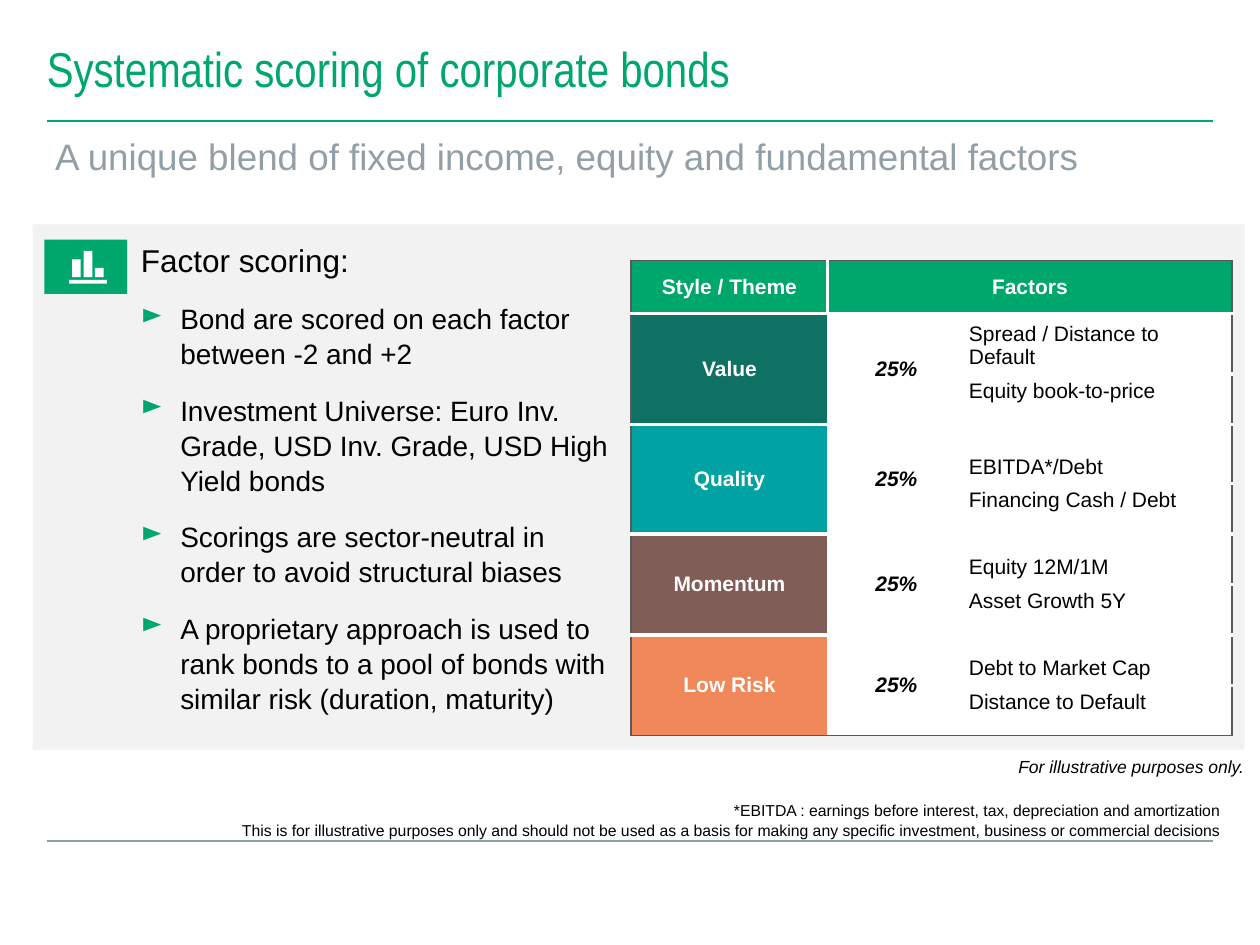
from pptx import Presentation
from pptx.dml.color import RGBColor
from pptx.enum.shapes import MSO_CONNECTOR, MSO_SHAPE
from pptx.enum.text import MSO_ANCHOR, PP_ALIGN
from pptx.oxml.ns import qn
from pptx.util import Pt
from lxml.etree import SubElement

GREEN = RGBColor(0x00, 0xA7, 0x6C)
GREY = RGBColor(0x93, 0x9F, 0xA6)
PANEL = RGBColor(0xF2, 0xF2, 0xF2)
BORDER = RGBColor(0x59, 0x59, 0x59)
BLACK = RGBColor(0x00, 0x00, 0x00)
WHITE = RGBColor(0xFF, 0xFF, 0xFF)
DARK_GREEN = RGBColor(0x0F, 0x71, 0x64)
TEAL = RGBColor(0x00, 0xA2, 0xA3)
BROWN = RGBColor(0x80, 0x5D, 0x56)
ORANGE = RGBColor(0xF1, 0x88, 0x5A)

BULLETS = [
    "Bond are scored on each factor between -2 and +2",
    "Investment Universe: Euro Inv. Grade, USD Inv. Grade, USD High Yield bonds",
    "Scorings are sector-neutral in order to avoid structural biases",
    "A proprietary approach is used to rank bonds to a pool of bonds with "
    "similar risk (duration, maturity)",
]
THEMES = [
    ("Value", DARK_GREEN, "Spread / Distance to Default", "Equity book-to-price"),
    ("Quality", TEAL, "EBITDA*/Debt", "Financing Cash / Debt"),
    ("Momentum", BROWN, "Equity 12M/1M", "Asset Growth 5Y"),
    ("Low Risk", ORANGE, "Debt to Market Cap", "Distance to Default"),
]
COLUMNS = [112.3, 78.5, 152.6]
ROWS = [30.2, 33.8, 28.8, 33.8] + [28.8] * 5


class Deck:
    font = "Arial"

    def __init__(self, prs):
        self.slide = prs.slides.add_slide(prs.slide_layouts[6])

    def line(self, y, color):
        """Draw a rule across the slide."""
        sp = self.slide.shapes.add_connector(
            MSO_CONNECTOR.STRAIGHT, Pt(26.8), Pt(y), Pt(693.2), Pt(y))
        sp.line.color.rgb = color
        sp.line.width = Pt(1)
        SubElement(sp._element.spPr, qn("a:effectLst"))

    def rect(self, x, y, w, h, color):
        sp = self.slide.shapes.add_shape(
            MSO_SHAPE.RECTANGLE, Pt(x), Pt(y), Pt(w), Pt(h))
        sp.shadow.inherit = False
        sp.fill.solid()
        sp.fill.fore_color.rgb = color
        sp.line.fill.background()

    def text(self, x, y, w, h, lines, size, color=BLACK, font=None, align=None,
             italic=False, margins=(0, 0), anchor=MSO_ANCHOR.TOP, spacing=None):
        """Add a text box and return its paragraphs."""
        tf = self.slide.shapes.add_textbox(Pt(x), Pt(y), Pt(w), Pt(h)).text_frame
        tf.word_wrap = True
        tf.vertical_anchor = anchor
        tf.margin_left = tf.margin_right = Pt(margins[0])
        tf.margin_top = tf.margin_bottom = Pt(margins[1])
        tf.text = "\n".join(lines)
        for p in tf.paragraphs:
            p.alignment = align
            p.line_spacing = spacing
            self.style(p, size, color, font, italic=italic)
        return tf.paragraphs

    def style(self, p, size, color, font=None, bold=False, italic=False):
        p.font.name = font or self.font
        p.font.size = Pt(size)
        p.font.color.rgb = color
        p.font.bold = bold
        p.font.italic = italic

    def bullet_list(self, x, y, w, h, heading, items):
        paragraphs = self.text(x, y, w, h, [heading] + items, 16, spacing=1.05)
        for p in paragraphs:
            p.space_after = Pt(12)
        paragraphs[0].font.size = Pt(18)
        paragraphs[0]._p.get_or_add_pPr().set("marL", str(Pt(13.5)))
        for p in paragraphs[1:]:
            pPr = p._p.get_or_add_pPr()
            pPr.set("marL", str(Pt(36)))
            pPr.set("indent", str(Pt(-22.5)))
            # Bullet elements must stand before the paragraph's font properties
            color = pPr.makeelement(qn("a:buClr"), {})
            SubElement(color, qn("a:srgbClr"), val=str(GREEN))
            char = pPr.makeelement(qn("a:buChar"), {"char": "►"})
            for element in (color, char):
                pPr.find(qn("a:defRPr")).addprevious(element)

    def table(self, x, y, columns, rows):
        table = self.slide.shapes.add_table(
            len(rows), len(columns), Pt(x), Pt(y),
            Pt(sum(columns)), Pt(sum(rows))).table
        table.first_row = table.horz_banding = False
        for column, width in zip(table.columns, columns):
            column.width = Pt(width)
        for row, height in zip(table.rows, rows):
            row.height = Pt(height)
        return table

    def cell(self, cell, text, fill, color=BLACK, bold=False, italic=False,
             align=PP_ALIGN.CENTER, anchor=MSO_ANCHOR.MIDDLE, margins=(2.2, 2.9)):
        cell.fill.solid()
        cell.fill.fore_color.rgb = fill
        cell.vertical_anchor = anchor
        cell.margin_left = cell.margin_right = Pt(margins[0])
        cell.margin_top = cell.margin_bottom = Pt(margins[1])
        cell.text = text
        p = cell.text_frame.paragraphs[0]
        p.alignment = align
        self.style(p, 12, color, bold=bold, italic=italic)
        return p

    def label(self, cell, text, fill):
        """Fill a cell with a bold white heading."""
        return self.cell(cell, text, fill, WHITE, bold=True, margins=(6.5, 3.6))

    def borders(self, table):
        """Rule the table white inside and dark grey around the outside."""
        last_row, last_col = len(table.rows) - 1, len(table.columns) - 1
        for row in range(last_row + 1):
            for col in range(last_col + 1):
                cell = table.cell(row, col)
                bottom = row + cell.span_height - 1
                right = col + cell.span_width - 1
                side = 2.25 if row == 0 else 1
                edges = [("L", col == 0, side), ("R", right == last_col, side),
                         ("T", row == 0, 2.25), ("B", bottom == last_row, 2.25)]
                tcPr = cell._tc.get_or_add_tcPr()
                for i, (edge, outer, width) in enumerate(edges):
                    ln = tcPr.makeelement(
                        qn("a:ln" + edge), {"w": str(Pt(1 if outer else width))})
                    fill = SubElement(ln, qn("a:solidFill"))
                    SubElement(fill, qn("a:srgbClr"),
                               val=str(BORDER if outer else WHITE))
                    tcPr.insert(i, ln)


def add_factor_table(deck):
    table = deck.table(360.7, 149, COLUMNS, ROWS)
    table.cell(0, 1).merge(table.cell(0, 2))
    deck.label(table.cell(0, 0), "Style / Theme", GREEN)
    deck.label(table.cell(0, 1), "Factors", GREEN)
    for i, (theme, color, first, second) in enumerate(THEMES):
        row = 1 + 2 * i
        for col in (0, 1):
            table.cell(row, col).merge(table.cell(row + 1, col))
        deck.label(table.cell(row, 0), theme, color).space_after = Pt(6)
        deck.cell(table.cell(row, 1), "25%", WHITE, bold=True, italic=True)
        deck.cell(table.cell(row, 2), first, WHITE,
                  align=PP_ALIGN.LEFT, anchor=MSO_ANCHOR.BOTTOM)
        deck.cell(table.cell(row + 1, 2), second, WHITE,
                  align=PP_ALIGN.LEFT, anchor=MSO_ANCHOR.TOP)
    deck.borders(table)


def add_chart_icon(deck):
    deck.rect(25.4, 137, 47.3, 31, GREEN)
    base = 158.4
    for x, height in ((41.2, 10.1), (47.8, 15.1), (54.3, 5.4)):
        deck.rect(x, base - height, 5, height, WHITE)
    deck.rect(39.5, 160, 21.6, 2.2, WHITE)


def main():
    prs = Presentation()
    prs.slide_width, prs.slide_height = Pt(720), Pt(540)
    deck = Deck(prs)
    deck.line(480.4, GREY)
    deck.line(69.1, GREEN)
    deck.rect(18.7, 128.2, 692.6, 300.2, PANEL)
    deck.text(26.8, 9.4, 679, 59, ["Systematic scoring of corporate bonds"], 28,
              GREEN, "Arial Narrow", anchor=MSO_ANCHOR.MIDDLE)
    deck.bullet_list(67, 136.8, 281.5, 280, "Factor scoring:", BULLETS)
    deck.text(25, 73.4, 672, 36,
              ["A unique blend of fixed income, equity and fundamental factors"],
              21, GREY, margins=(6.5, 2.9))
    deck.text(360.7, 428.4, 357.1, 19.4, ["For illustrative purposes only."], 10,
              align=PP_ALIGN.RIGHT, italic=True, margins=(7.2, 3.6))
    deck.text(25, 457.2, 672, 22.3, [
        "*EBITDA : earnings before interest, tax, depreciation and amortization",
        "This is for illustrative purposes only and should not be used as a basis "
        "for making any specific investment, business or commercial decisions",
    ], 9, align=PP_ALIGN.RIGHT, spacing=1.05)
    add_chart_icon(deck)
    add_factor_table(deck)
    prs.save("out.pptx")


if __name__ == "__main__":
    main()
